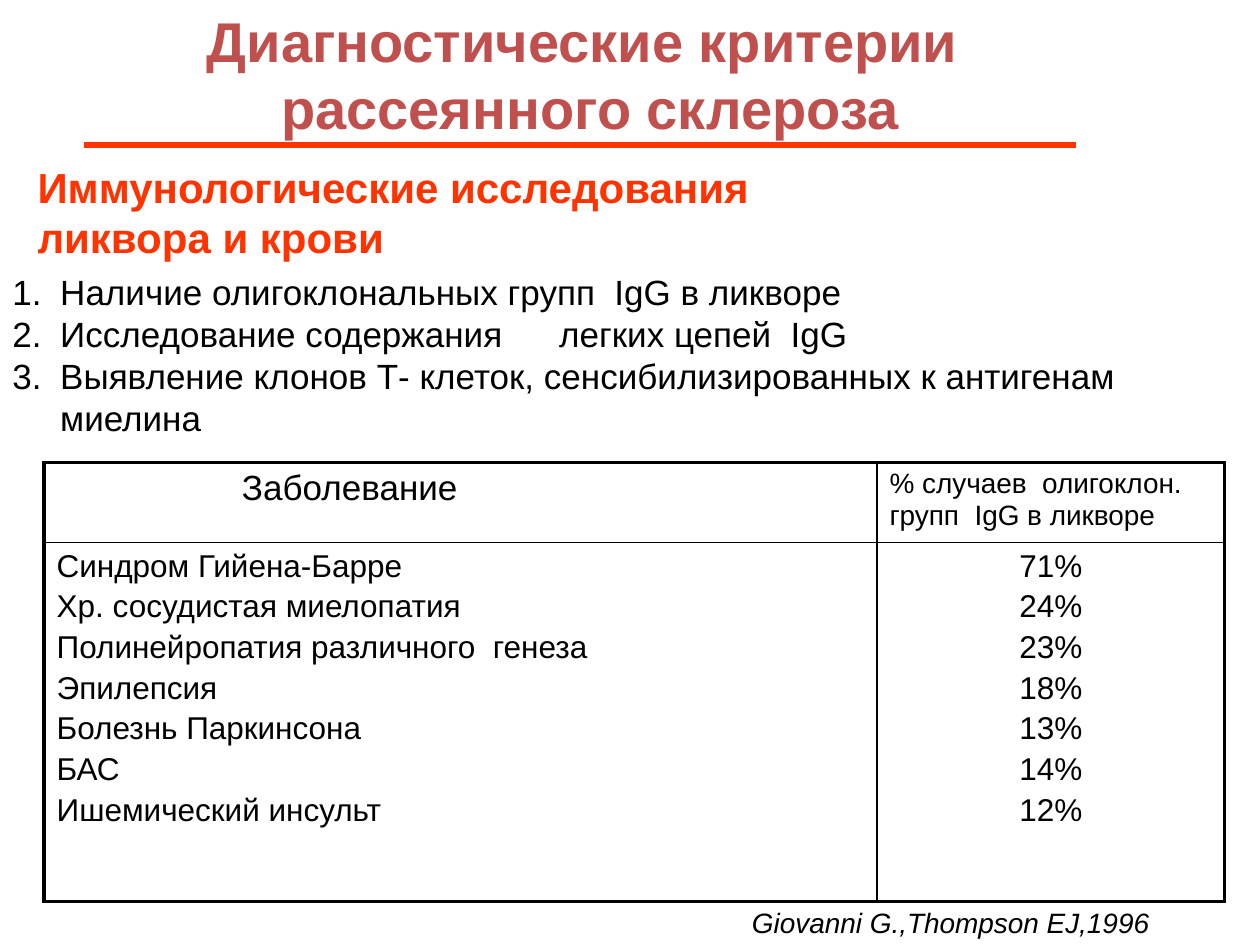
import pptx
import pptx.util
import pptx.oxml
import pptx.oxml.ns
import pptx.dml.color
import pptx.enum.text
import pptx.enum.shapes

Inches = pptx.util.Inches
Pt = pptx.util.Pt
ALIGN = pptx.enum.text.PP_ALIGN
NS = pptx.oxml.ns.nsdecls("a")
BLACK, RED, ROSE, WHITE = "000000", "FF3300", "C0504D", "FFFFFF"

HEAD = ["Диагностические критерии ", "рассеянного склероза"]
TOPIC = ["Иммунологические исследования", "ликвора и крови"]
TESTS = [
    "Наличие олигоклональных групп  IgG в ликворе",
    "Исследование содержания\tлегких цепей  IgG",
    "Выявление клонов Т- клеток, сенсибилизированных к антигенам миелина",
]
CASES = {
    "Синдром Гийена-Барре": "71%",
    "Хр. сосудистая миелопатия": "24%",
    "Полинейропатия различного  генеза": "23%",
    "Эпилепсия": "18%",
    "Болезнь Паркинсона": "13%",
    "БАС": "14%",
    "Ишемический инсульт": "12%",
}


def paint(code):
    """Turn a hex string into a colour."""
    return pptx.dml.color.RGBColor.from_string(code)


def node(text):
    """Make a drawing element from its markup without namespace."""
    tag, rest = text[:-2].split(" ", 1) if " " in text else (text[:-2], "")
    return pptx.oxml.parse_xml(f"<{tag} {NS} {rest}/>")


def write(frame, lines, look, color=BLACK, align=ALIGN.LEFT, gap=0):
    """Fill a text frame with one paragraph for each line."""
    frame.word_wrap = True
    for i, line in enumerate(lines):
        para = frame.paragraphs[0] if i == 0 else frame.add_paragraph()
        para.alignment = align
        if i and gap:
            para.space_before = Pt(gap)
        run = para.add_run()
        run.text = line
        for key, val in {"name": "Arial", **look}.items():
            setattr(run.font, key, val)
        run.font.color.rgb = paint(color)


def add_text(slide, box, lines, look, color=BLACK):
    """Add a text box and return its frame."""
    frame = slide.shapes.add_textbox(*map(Inches, box)).text_frame
    write(frame, lines, look, color)
    return frame


def add_title(slide, box):
    """Place the title and the rule beneath it."""
    left, top, width, height = box
    title = slide.shapes.title
    place = zip(("left", "top", "width", "height"), box)
    for key, val in place:
        setattr(title, key, Inches(val))
    frame = title.text_frame
    frame.vertical_anchor = pptx.enum.text.MSO_ANCHOR.TOP
    frame.auto_size = pptx.enum.text.MSO_AUTO_SIZE.NONE
    write(frame, HEAD, {"size": Pt(32), "bold": True}, ROSE, ALIGN.CENTER)
    level = Inches(top + 1.15)
    rule = slide.shapes.add_connector(
        pptx.enum.shapes.MSO_CONNECTOR.STRAIGHT,
        Inches(left + 0.08), level, Inches(left + 7.95), level)
    rule.line.color.rgb = paint(RED)
    rule.line.width = Pt(3)
    rule._element.spPr.append(node("a:effectLst/>"))


def add_tests(slide, box):
    """Add the numbered list of tests."""
    frame = add_text(slide, box, TESTS, {"size": Pt(20)})
    for para in frame.paragraphs:
        props = para._p.get_or_add_pPr()
        props.set("marL", str(Inches(0.38)))
        props.set("indent", str(Inches(-0.38)))
        props.append(node('a:buFont typeface="Arial"/>'))
        props.append(node('a:buAutoNum type="arabicPeriod"/>'))
        if "\t" in para.text:
            tabs = node("a:tabLst/>")
            tabs.append(node(f'a:tab pos="{Inches(4.34)}" algn="l"/>'))
            props.append(tabs)


def edge(cell, sides):
    """Draw the borders of a cell from a dict of side and width."""
    props = cell._tc.get_or_add_tcPr()
    for side, width in sides.items():
        line = node(f'a:ln{side} w="{Pt(width)}"/>')
        fill = node("a:solidFill/>")
        fill.append(node(f'a:srgbClr val="{BLACK}"/>'))
        line.append(fill)
        props.append(line)


def add_grid(slide, box):
    """Add the table of diseases and shares of cases."""
    table = slide.shapes.add_table(2, 2, *map(Inches, box)).table
    table.first_row = table.horz_banding = False
    for i, share in enumerate((6.61, 2.76)):
        table.columns[i].width = Inches(share)
    for i, share in enumerate((0.63, 2.85)):
        table.rows[i].height = Inches(share)
    cells = [
        (["Заболевание"], 20, ALIGN.LEFT),
        (["% случаев  олигоклон. групп  IgG в ликворе"], 16, ALIGN.LEFT),
        (CASES.keys(), 18, ALIGN.LEFT),
        (CASES.values(), 18, ALIGN.CENTER),
    ]
    for i, (lines, size, align) in enumerate(cells):
        row, col = divmod(i, 2)
        cell = table.cell(row, col)
        write(cell.text_frame, lines, {"size": Pt(size)}, align=align, gap=3.1)
        edge(cell, {"L": 1 if col else 2.25, "R": 2.25 if col else 1,
                    "T": 1 if row else 2.25, "B": 2.25 if row else 1})
        cell.fill.solid()
        cell.fill.fore_color.rgb = paint(WHITE)
    first = table.cell(0, 0).text_frame.paragraphs[0]
    first._p.get_or_add_pPr().set("marL", str(Inches(1.47)))


def main():
    """Build the slide and save it."""
    deck = pptx.Presentation()
    deck.slide_width, deck.slide_height = Inches(10), Inches(7.5)
    slide = deck.slides.add_slide(deck.slide_layouts[5])
    add_title(slide, (0.59, 0, 8.19, 1.17))
    add_text(slide, (0.2, 1.23, 7.56, 0.9), TOPIC,
             {"size": Pt(24), "bold": True}, RED)
    add_tests(slide, (0, 2.1, 10, 1.43))
    add_grid(slide, (0.35, 3.67, 9.37, 3.48))
    add_text(slide, (5.87, 7.14, 3.86, 0.37), ["Giovanni G.,Thompson EJ,1996"],
             {"size": Pt(16), "italic": True})
    deck.save("out.pptx")


if __name__ == "__main__":
    main()
